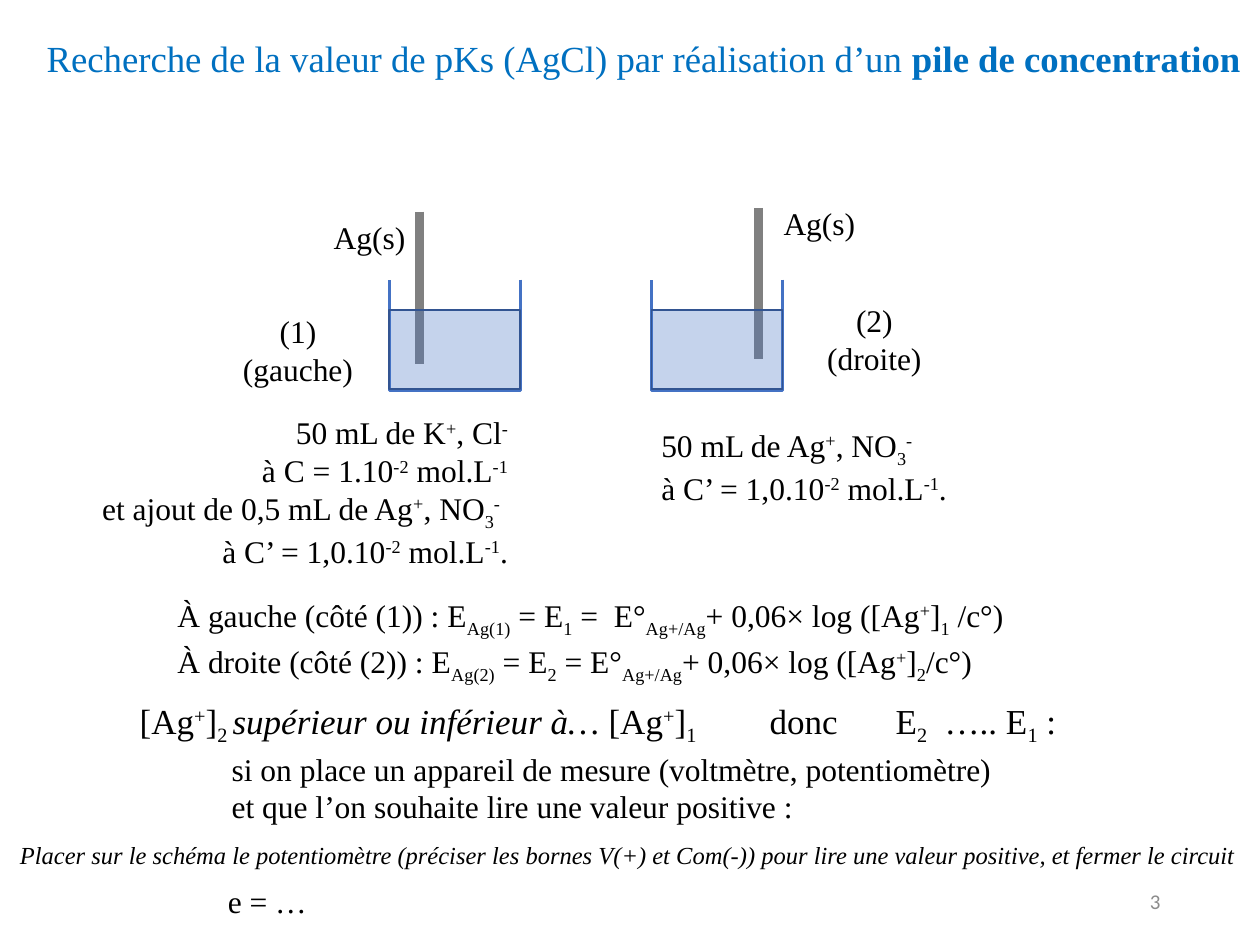
from lxml import etree
from pptx import Presentation
from pptx.dml.color import RGBColor
from pptx.enum.shapes import MSO_CONNECTOR, MSO_SHAPE
from pptx.enum.text import MSO_ANCHOR, MSO_AUTO_SIZE, PP_ALIGN
from pptx.oxml.ns import qn
from pptx.util import Inches, Pt

STRAIGHT = MSO_CONNECTOR.STRAIGHT
RECTANGLE, BRACKET = MSO_SHAPE.RECTANGLE, MSO_SHAPE.RIGHT_BRACKET
TOP, MIDDLE = MSO_ANCHOR.TOP, MSO_ANCHOR.MIDDLE
NO_AUTOFIT = MSO_AUTO_SIZE.NONE
LEFT, CENTER, RIGHT = PP_ALIGN.LEFT, PP_ALIGN.CENTER, PP_ALIGN.RIGHT

BLACK = RGBColor(0x00, 0x00, 0x00)
TITLE_BLUE = RGBColor(0x00, 0x70, 0xC0)
GLASS_BLUE = RGBColor(0x44, 0x72, 0xC4)
LIQUID_EDGE = RGBColor(0x32, 0x54, 0x91)
SILVER = RGBColor(0x80, 0x80, 0x80)
NUMBER_GRAY = RGBColor(0x8C, 0x8C, 0x8C)

SERIF, SANS = "Times New Roman", "Calibri"
BASELINES = {"^": "30000", "~": "-25000"}
EMPHASIS = {"*": "bold", "_": "italic"}

HALF_CELLS = [
    {
        "tank_left": 3.09, "electrode": (3.33, 1.68, 2.89),
        "labels": [
            ((2.55, 1.68, 0.78, 0.4), ["Ag(s)"], LEFT),
            ((0.6, 3.23, 3.53, 1.31),
             ["50 mL de K^+^, Cl^-^", "à C = 1.10^-2^ mol.L^-1^",
              "et ajout de 0,5 mL de Ag^+^, NO~3~^-^ ",
              "à C’ = 1,0.10^-2^ mol.L^-1^."], RIGHT),
            ((1.82, 2.43, 1.09, 0.71), ["(1)", "(gauche)"], CENTER),
        ],
    },
    {
        "tank_left": 5.17, "electrode": (6.02, 1.65, 2.85),
        "labels": [
            ((6.12, 1.57, 0.78, 0.4), ["Ag(s)"], LEFT),
            ((5.15, 3.33, 2.53, 0.71),
             ["50 mL de Ag^+^, NO~3~^-^", "à C’ = 1,0.10^-2^ mol.L^-1^."], LEFT),
            ((6.46, 2.34, 0.96, 0.71), ["(2)", "(droite)"], CENTER),
        ],
    },
]

STATEMENTS = [
    ((0.06, 6.62, 9.97, 0.34), 14,
     ["_Placer sur le schéma le potentiomètre (préciser les bornes V(+) et Com(-)) "
      "pour lire une valeur positive, et fermer le circuit_"]),
    ((1.31, 4.68, 6.99, 0.4), 18,
     ["À gauche (côté (1)) : E~Ag(1)~ = E~1~ =  E°~Ag+/Ag~"
      "+ 0,06× log ([Ag^+^]~1~ /c°)"]),
    ((1.31, 5.05, 6.79, 0.4), 18,
     ["À droite (côté (2)) : E~Ag(2)~ = E~2~ = E°~Ag+/Ag~"
      "+ 0,06× log ([Ag^+^]~2~/c°)"]),
    ((1.01, 5.5, 8.07, 0.44), 20,
     ["[Ag^+^]~2 ~_supérieur ou inférieur à… _[Ag^+^]~1~ \t\tdonc \tE~2~  ….. E~1~ :"]),
    ((1.74, 5.9, 6.36, 0.71), 18,
     ["si on place un appareil de mesure (voltmètre, potentiomètre)",
      "et que l’on souhaite lire une valeur positive :"]),
    ((1.71, 6.95, 6.97, 0.4), 18, ["e = …"]),
]


def split_markup(line):
    """Return (text, active marks) pieces; each mark toggles its style."""
    pieces, text, active = [], "", set()
    for char in line:
        if char in BASELINES or char in EMPHASIS:
            if text:
                pieces.append((text, frozenset(active)))
            text = ""
            active ^= {char}
        else:
            text += char
    if text:
        pieces.append((text, frozenset(active)))
    return pieces


def write_line(paragraph, line, size, color, font_name):
    """Write one marked-up line as formatted runs."""
    for text, marks in split_markup(line):
        run = paragraph.add_run()
        run.text = text
        values = {"name": font_name, "size": Pt(size)}
        values.update({EMPHASIS[mark]: True for mark in marks if mark in EMPHASIS})
        for name, value in values.items():
            setattr(run.font, name, value)
        run.font.color.rgb = color
        for mark in marks & BASELINES.keys():
            run.font._element.set("baseline", BASELINES[mark])


def write_lines(frame, lines, size, color=BLACK, align=LEFT, font_name=SERIF,
                anchor=TOP, wrap=True):
    """Fill a text frame with marked-up lines."""
    settings = {"word_wrap": wrap, "auto_size": NO_AUTOFIT, "vertical_anchor": anchor}
    for name, value in settings.items():
        setattr(frame, name, value)
    for index, line in enumerate(lines):
        paragraph = frame.paragraphs[0] if index == 0 else frame.add_paragraph()
        paragraph.alignment = align
        write_line(paragraph, line, size, color, font_name)


def add_text(shapes, box, lines, size, **options):
    """Add a text box holding marked-up lines."""
    label = shapes.add_textbox(*map(Inches, box))
    write_lines(label.text_frame, lines, size, **options)


def add_title(slide, text):
    """Place and write the slide title."""
    title = slide.shapes.title
    place = {"left": 0.27, "top": 0.23, "width": 10.08, "height": 0.45}
    for name, value in place.items():
        setattr(title, name, Inches(value))
    write_lines(title.text_frame, [text], 21, color=TITLE_BLUE)


def add_outline(shapes, preset, box, color, width):
    """Add an unfilled, shadowless preset shape."""
    outline = shapes.add_shape(preset, *map(Inches, box))
    outline.shadow.inherit = False
    outline.fill.background()
    outline.line.color.rgb = color
    outline.line.width = Pt(width)
    return outline


def add_beaker(shapes, left):
    """Add an open glass beaker."""
    glass = add_outline(shapes, BRACKET, (left + 0.08, 2.14, 0.88, 1.04), GLASS_BLUE, 1.5)
    glass.rotation = 90
    glass.adjustments[0] = 0


def add_electrode(shapes, x, top, bottom):
    """Add a vertical silver rod."""
    rod = shapes.add_connector(STRAIGHT, *map(Inches, (x, top, x, bottom)))
    rod.line.color.rgb = SILVER
    rod.line.width = Pt(5)
    etree.SubElement(rod._element.spPr, qn("a:effectLst"))


def add_solution(shapes, left):
    """Add the translucent liquid in a beaker."""
    liquid = add_outline(shapes, RECTANGLE, (left, 2.46, 1.04, 0.63), LIQUID_EDGE, 1)
    liquid.fill.solid()
    liquid.fill.fore_color.rgb = GLASS_BLUE
    color = liquid._element.spPr.find(qn("a:solidFill")).find(qn("a:srgbClr"))
    etree.SubElement(color, qn("a:alpha")).set("val", "31000")


def add_half_cell(slide, half_cell):
    """Add one grouped half-cell with its labels."""
    shapes = slide.shapes.add_group_shape().shapes
    add_beaker(shapes, half_cell["tank_left"])
    add_electrode(shapes, *half_cell["electrode"])
    add_solution(shapes, half_cell["tank_left"])
    for box, lines, align in half_cell["labels"]:
        add_text(shapes, box, lines, 18, align=align, wrap=False)


def main():
    """Build and save the concentration cell slide."""
    deck = Presentation()
    deck.slide_width, deck.slide_height = Inches(10), Inches(7.5)
    slide = deck.slides.add_slide(deck.slide_layouts[5])
    add_title(slide, "Recherche de la valeur de pKs (AgCl) par réalisation d’un "
                     "*pile de concentration*")
    for half_cell in HALF_CELLS:
        add_half_cell(slide, half_cell)
    for box, size, lines in STATEMENTS:
        add_text(slide.shapes, box, lines, size)
    add_text(slide.shapes, (7.06, 6.95, 2.25, 0.4), ["3"], 12, color=NUMBER_GRAY,
             align=RIGHT, font_name=SANS, anchor=MIDDLE)
    deck.save("out.pptx")


if __name__ == "__main__":
    main()
